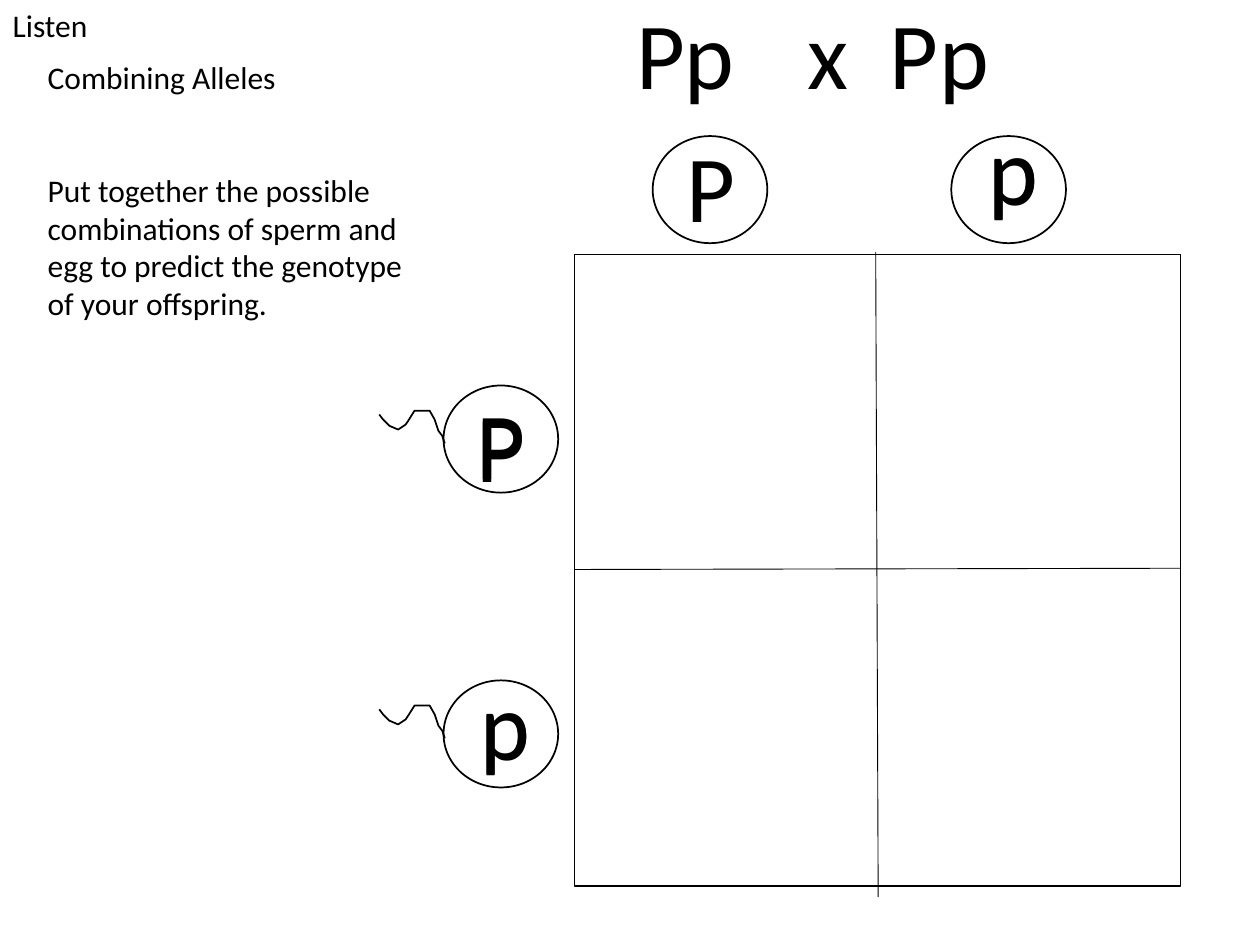
from dataclasses import dataclass

import pptx
import pptx.dml.color
import pptx.enum.shapes
import pptx.enum.text
import pptx.oxml
import pptx.util
from pptx.util import Inches

COLORS = {"ink": "000000", "paper": "FFFFFF"}
FONT = "Calibri"
CELL_WIDTH, CELL_HEIGHT = 0.91, 0.85
LETTER_HEIGHT = 1.01
LETTER_WIDTHS = {"P": 0.59, "p": 0.6, "x": 0.53}
# Sperm tail, measured from the top left of its cell
TAIL = [(0.01, 0.46), (-0.01, 0.4), (-0.04, 0.36), (-0.07, 0.27), (-0.11, 0.2),
        (-0.23, 0.2), (-0.28, 0.28), (-0.3, 0.31), (-0.36, 0.35), (-0.43, 0.32),
        (-0.48, 0.27), (-0.51, 0.23)]


@dataclass
class Letter:
    text: str
    left: float
    top: float


@dataclass
class Cell:
    left: float
    top: float


@dataclass
class Line:
    start: tuple[float, float]
    end: tuple[float, float]


CROSS = [Letter("P", 4.95, -0.09), Letter("p", 5.33, -0.09), Letter("x", 6.31, -0.09),
         Letter("P", 6.96, -0.09), Letter("p", 7.35, -0.09)]
# Some gamete letters are doubled, slightly offset, to look heavier
GAMETES = [Letter("P", 3.68, 3.01), Letter("p", 3.71, 5.24), Letter("p", 7.74, 0.83),
           Letter("P", 5.35, 0.97), Letter("P", 3.68, 3.03), Letter("p", 7.74, 0.82),
           Letter("p", 3.71, 5.23)]
EGGS = [Cell(5.18, 1.08), Cell(7.55, 1.08)]
SPERM = [Cell(3.52, 3.06), Cell(3.52, 5.4)]
DIVIDERS = [Line((6.95, 2), (6.97, 7.12)), Line((4.56, 4.52), (9.37, 4.51))]


def color(name: str) -> pptx.dml.color.RGBColor:
    return pptx.dml.color.RGBColor.from_string(COLORS[name])


def set_line(shape, width: float) -> None:
    shape.line.color.rgb = color("ink")
    shape.line.width = pptx.util.Pt(width)


def add_outlined(shapes, kind, left: float, top: float, width: float, height: float) -> None:
    shape = shapes.add_shape(kind, Inches(left), Inches(top), Inches(width), Inches(height))
    shape.shadow.inherit = False
    shape.fill.solid()
    shape.fill.fore_color.rgb = color("paper")
    set_line(shape, 1)


def add_divider(shapes, line: Line) -> None:
    connector = shapes.add_connector(
        pptx.enum.shapes.MSO_CONNECTOR.STRAIGHT,
        *(Inches(value) for value in line.start + line.end))
    set_line(connector, 0.5)
    connector._element.spPr.append(pptx.oxml.parse_xml(
        '<a:effectLst xmlns:a="http://schemas.openxmlformats.org/drawingml/2006/main"/>'))


def add_cell(shapes, cell: Cell) -> None:
    add_outlined(shapes, pptx.enum.shapes.MSO_SHAPE.OVAL,
                 cell.left, cell.top, CELL_WIDTH, CELL_HEIGHT)


def add_sperm(shapes, cell: Cell) -> None:
    group = shapes.add_group_shape()
    add_cell(group.shapes, cell)
    points = [(Inches(cell.left + x), Inches(cell.top + y)) for x, y in TAIL]
    builder = group.shapes.build_freeform(*points[0])
    builder.add_line_segments(points[1:], close=False)
    tail = builder.convert_to_shape()
    tail.shadow.inherit = False
    tail.fill.background()
    set_line(tail, 1)


def write(box, text: str, *, size: float = 18, align=pptx.enum.text.PP_ALIGN.LEFT,
          wrap: bool = True, gap: float = 0) -> None:
    """Fill a box with one paragraph per line, with a gap in points between them."""
    frame = box.text_frame
    frame.text = text
    frame.word_wrap = wrap
    frame.vertical_anchor = pptx.enum.text.MSO_ANCHOR.TOP
    frame.auto_size = pptx.enum.text.MSO_AUTO_SIZE.SHAPE_TO_FIT_TEXT
    for index, para in enumerate(frame.paragraphs):
        para.alignment = align
        para.line_spacing = 1.0
        para.space_before = pptx.util.Pt(gap if index else 0)
        for span in para.runs:
            span.font.name = FONT
            span.font.size = pptx.util.Pt(size)
            span.font.color.rgb = color("ink")


def add_letter(shapes, letter: Letter) -> None:
    box = shapes.add_textbox(Inches(letter.left), Inches(letter.top),
                             Inches(LETTER_WIDTHS[letter.text]), Inches(LETTER_HEIGHT))
    write(box, letter.text, size=54, align=pptx.enum.text.PP_ALIGN.CENTER, wrap=False)


def main() -> None:
    deck = pptx.Presentation()
    deck.slide_width, deck.slide_height = Inches(10), Inches(7.5)
    page = deck.slides.add_slide(deck.slide_layouts.get_by_name("Title Only"))
    shapes = page.shapes

    title = shapes.title
    title.left, title.top = Inches(0), Inches(0)
    title.width, title.height = Inches(2.32), Inches(0.4)
    write(title, "Listen")

    square = shapes.add_group_shape()
    add_outlined(square.shapes, pptx.enum.shapes.MSO_SHAPE.RECTANGLE, 4.56, 2.02, 4.81, 5.01)
    for line in DIVIDERS:
        add_divider(square.shapes, line)

    instructions = shapes.add_textbox(Inches(0.28), Inches(0.41), Inches(3.25), Inches(2.83))
    write(instructions,
          "Combining Alleles\nPut together the possible combinations of sperm and egg "
          "to predict the genotype of your offspring.", gap=43)

    for letter in CROSS:
        add_letter(shapes, letter)
    for egg in EGGS:
        add_cell(shapes, egg)
    for sperm in SPERM:
        add_sperm(shapes, sperm)
    for letter in GAMETES:
        add_letter(shapes, letter)

    deck.save("out.pptx")


if __name__ == "__main__":
    main()
